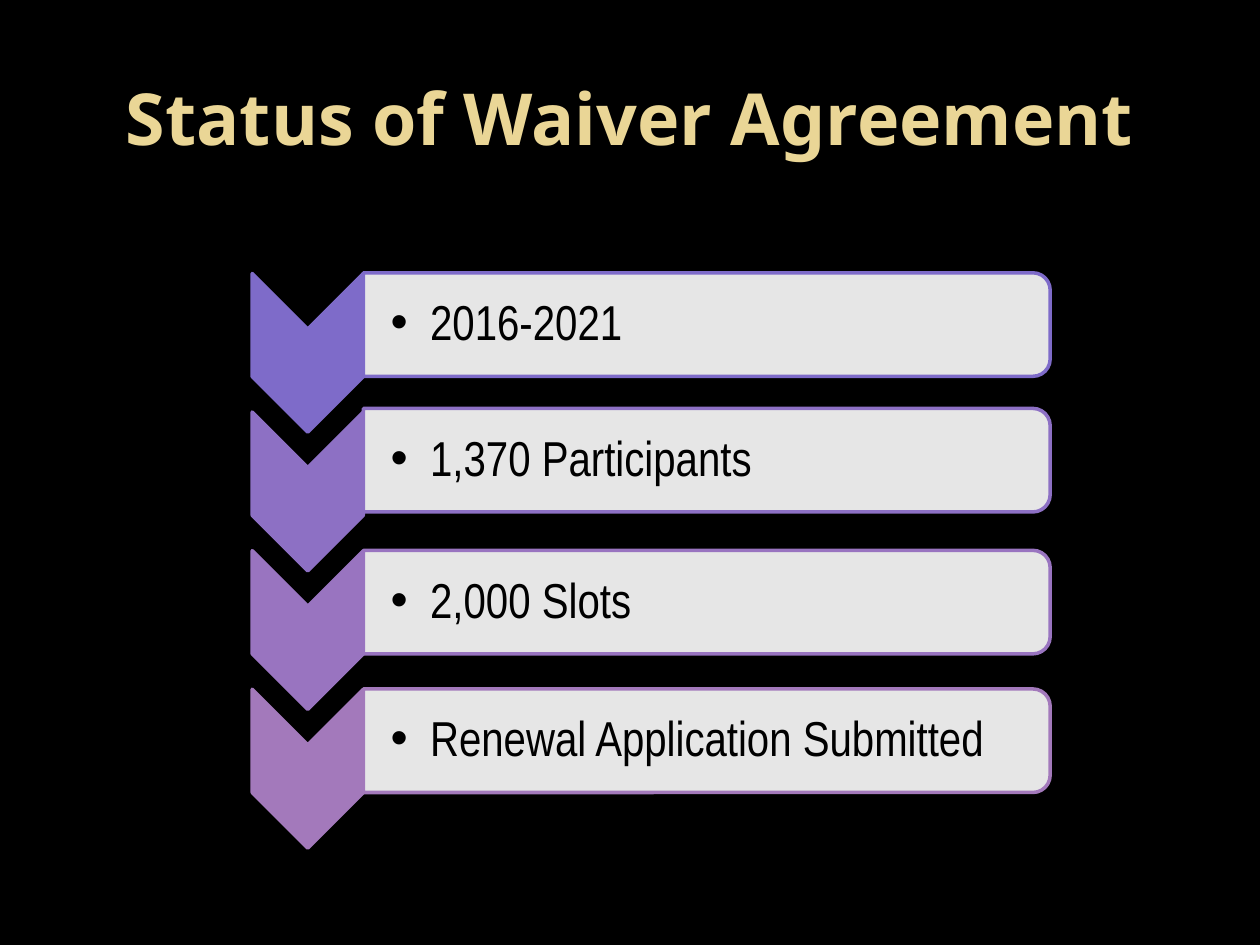
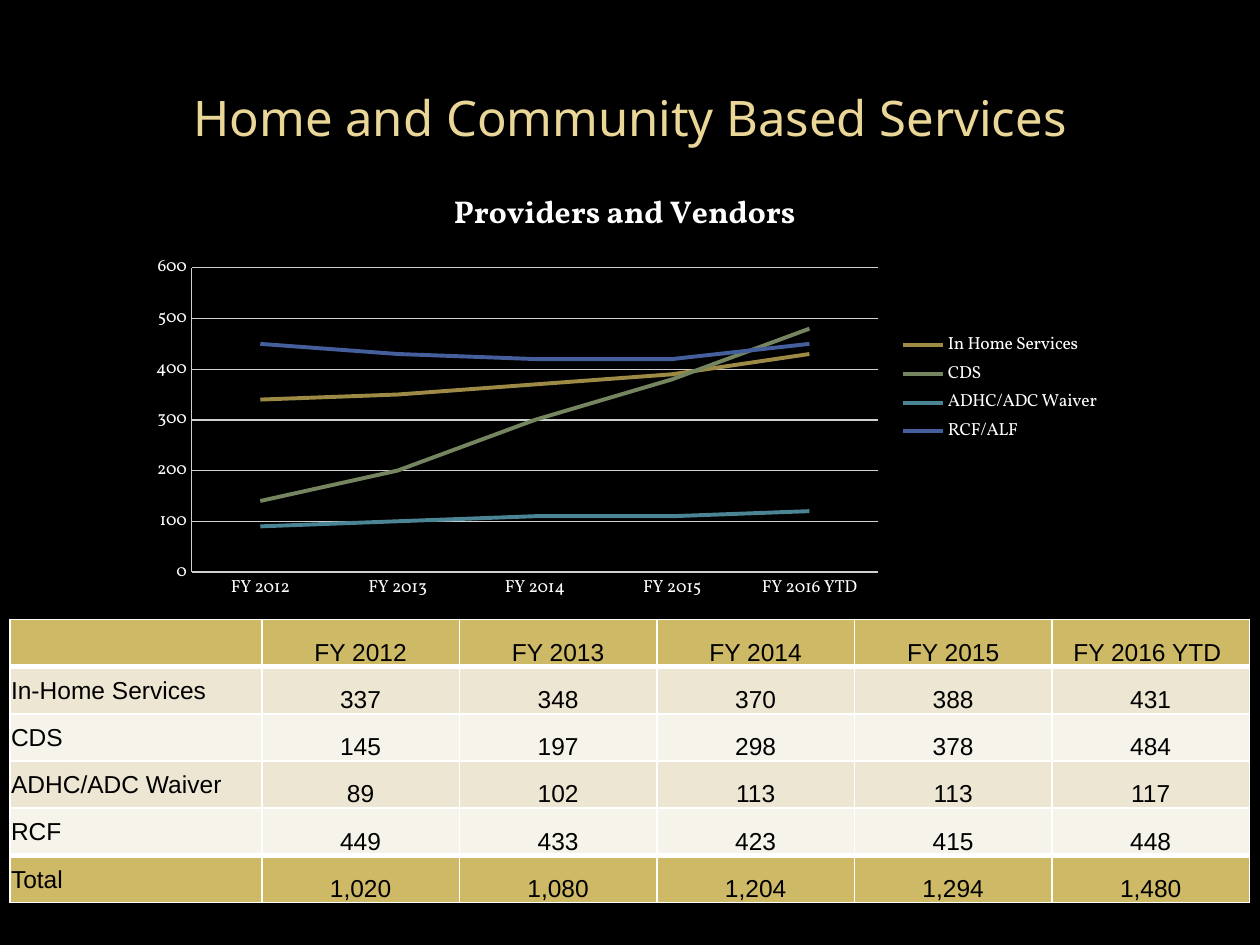
from lxml import etree
from pptx import Presentation
from pptx.chart.data import CategoryChartData
from pptx.dml.color import RGBColor
from pptx.enum.chart import XL_CHART_TYPE, XL_LEGEND_POSITION, XL_TICK_MARK
from pptx.enum.shapes import MSO_SHAPE
from pptx.enum.text import MSO_ANCHOR, PP_ALIGN
from pptx.oxml import parse_xml
from pptx.oxml.ns import nsdecls, qn
from pptx.util import Pt

COLORS = {
    "background": "000000", "title": "EAD696", "ink": "000000", "white": "FFFFFF",
    "header": "CEB966", "band_dark": "EDE6D3", "band_light": "F6F3EA", "grid": "D0D0D0",
}
STEP_COLORS = ["7E6BC9", "8D70C4", "9974C0", "A379BB"]
SERIES_COLORS = ["9C8A45", "75855F", "4A8495", "455E9C"]


def rgb(value):
    return RGBColor.from_string(value)


def add_titled_slide(deck, title, size, bold):
    slide = deck.slides.add_slide(deck.slide_layouts[6])
    slide.background.fill.solid()
    slide.background.fill.fore_color.rgb = rgb(COLORS["background"])
    frame = slide.shapes.add_textbox(Pt(36), Pt(21.6), Pt(648), Pt(90)).text_frame
    frame.word_wrap = True
    frame.vertical_anchor = MSO_ANCHOR.MIDDLE
    heading = frame.paragraphs[0]
    heading.text = title
    heading.alignment = PP_ALIGN.CENTER
    font = heading.runs[0].font
    font.name, font.size, font.bold = "Noto Sans", Pt(size), bold
    font.color.rgb = rgb(COLORS["title"])
    return slide


deck = Presentation()
deck.slide_width, deck.slide_height = Pt(720), Pt(540)

# Waiver status: a chevron and a rounded bar for each step
status = add_titled_slide(deck, "Status of Waiver Agreement", 41, True)
steps = ["2016-2021", "1,370 Participants", "2,000 Slots", "Renewal Application Submitted"]
bar_tops = [155.9, 233.4, 314.5, 393.7]
bar_length, bar_height = 392.4, 59.2

for index, (step, color, bar_top) in enumerate(zip(steps, STEP_COLORS, bar_tops)):
    chevron = status.shapes.add_shape(
        MSO_SHAPE.CHEVRON, Pt(130.5), Pt(169.9 + 79.2 * index), Pt(90.7), Pt(63.5))
    # A quarter turn swaps width and height around the centre
    turn_shift = (bar_length - bar_height) / 2
    bar = status.shapes.add_shape(
        MSO_SHAPE.ROUND_2_SAME_RECTANGLE, Pt(207.7 + turn_shift), Pt(bar_top - turn_shift),
        Pt(bar_height), Pt(bar_length))
    for part, fill in ((chevron, color), (bar, COLORS["white"])):
        part.rotation = 90
        part.shadow.inherit = False
        part.fill.solid()
        part.fill.fore_color.rgb = rgb(fill)
        part.line.color.rgb = rgb(color)
        part.line.width = Pt(2)
    bar_color = bar.fill._xPr.find(qn("a:solidFill"))[0]
    etree.SubElement(bar_color, qn("a:alpha"), val="90000")

    frame = status.shapes.add_textbox(
        Pt(207.5), Pt(bar_top + 3), Pt(389.5), Pt(53.3)).text_frame
    frame.word_wrap = True
    frame.vertical_anchor = MSO_ANCHOR.MIDDLE
    frame.margin_left = Pt(15.8)
    frame.margin_top = frame.margin_right = frame.margin_bottom = Pt(1.4)
    line = frame.paragraphs[0]
    line.text = step
    line.line_spacing = 0.9
    line.runs[0].font.name = "Arial Narrow"
    line.runs[0].font.size = Pt(28)
    line.runs[0].font.color.rgb = rgb(COLORS["ink"])
    bullet = line._p.get_or_add_pPr()
    bullet.set("marL", str(Pt(22.5)))
    bullet.set("indent", str(-Pt(22.5)))
    etree.SubElement(bullet, qn("a:buFont"), typeface="Arial")
    etree.SubElement(bullet, qn("a:buChar"), char="•")

# Services: provider counts by year
services = add_titled_slide(deck, "Home and Community Based Services", 28, False)
years = ["FY 2012", "FY 2013", "FY 2014", "FY 2015", "FY 2016 YTD"]
counts = {
    "In-Home Services": [337, 348, 370, 388, 431],
    "CDS": [145, 197, 298, 378, 484],
    "ADHC/ADC Waiver": [89, 102, 113, 113, 117],
    "RCF": [449, 433, 423, 415, 448],
}
totals = [sum(year) for year in zip(*counts.values())]
rows = [["", *years[:-1], "FY 2016 YTD "]]
rows += [[name, *(f"{n:,}" for n in values)]
         for name, values in [*counts.items(), ("Total", totals)]]
last = len(rows) - 1

# Table
table = services.shapes.add_table(
    len(rows), len(rows[0]), Pt(5.6), Pt(353.9), Pt(708.5), Pt(162)).table
table.first_row = table.horz_banding = False
for index, column in enumerate(table.columns):
    column.width = Pt(112.9 if index else 144)
for r, row in enumerate(rows):
    table.rows[r].height = Pt(27)
    if r in (0, last):
        fill = COLORS["header"]
    else:
        fill = COLORS["band_dark" if r % 2 else "band_light"]
    for c, entry in enumerate(row):
        cell = table.cell(r, c)
        cell.margin_left = cell.margin_right = cell.margin_top = Pt(0.7)
        cell.margin_bottom = 0
        cell.vertical_anchor = MSO_ANCHOR.BOTTOM if c else MSO_ANCHOR.MIDDLE
        cell.fill.solid()
        cell.fill.fore_color.rgb = rgb(fill)
        paragraph = cell.text_frame.paragraphs[0]
        paragraph.text = entry
        paragraph.alignment = PP_ALIGN.CENTER if c else PP_ALIGN.LEFT
        for run in paragraph.runs:
            run.font.name, run.font.size = "Arial", Pt(14)
            run.font.color.rgb = rgb(COLORS["ink"])
        # Heavy rules below the header and above the total
        edges = {"lnL": 1, "lnR": 1,
                 "lnT": 3 if r in (1, last) else 1,
                 "lnB": 3 if r in (0, last - 1) else 1}
        for position, (edge, weight) in enumerate(edges.items()):
            cell._tc.get_or_add_tcPr().insert(position, parse_xml(
                f'<a:{edge} {nsdecls("a")} w="{Pt(weight)}"><a:solidFill>'
                f'<a:srgbClr val="{COLORS["white"]}"/></a:solidFill></a:{edge}>'))

# Line chart, with counts rounded to tens
trend = CategoryChartData()
trend.categories = years
legend_names = ["In Home Services", "CDS", "ADHC/ADC Waiver", "RCF/ALF"]
for name, values in zip(legend_names, counts.values()):
    trend.add_series(name, [round(value, -1) for value in values])
chart = services.shapes.add_chart(
    XL_CHART_TYPE.LINE, Pt(78), Pt(96), Pt(558), Pt(252), trend).chart
chart.font.name, chart.font.size = "Vollkorn", Pt(10)
chart.font.color.rgb = rgb(COLORS["white"])
chart.has_title = True
chart.chart_title.text_frame.text = "Providers and Vendors"
title_font = chart.chart_title.text_frame.paragraphs[0].runs[0].font
title_font.name, title_font.size, title_font.bold = "Vollkorn", Pt(18), True
title_font.color.rgb = rgb(COLORS["white"])
chart.has_legend = True
chart.legend.position = XL_LEGEND_POSITION.RIGHT
chart.legend.include_in_layout = False

for axis in (chart.category_axis, chart.value_axis):
    axis.major_tick_mark = axis.minor_tick_mark = XL_TICK_MARK.NONE
    axis.format.line.color.rgb = rgb(COLORS["grid"])
    axis.format.line.width = Pt(0.75)
chart.value_axis.minimum_scale, chart.value_axis.maximum_scale = 0, 600
chart.value_axis.major_unit = 100
grid = chart.value_axis.major_gridlines.format.line
grid.color.rgb = rgb(COLORS["grid"])
grid.width = Pt(0.75)

for series, color in zip(chart.plots[0].series, SERIES_COLORS):
    series.smooth = False
    series.format.line.color.rgb = rgb(color)
    series.format.line.width = Pt(2.25)

# Fixed plot area, in hundredths of a percent of the chart
plot_area = chart._chartSpace.chart.plotArea
for old_layout in plot_area.findall(qn("c:layout")):
    plot_area.remove(old_layout)
shares = {"x": 565, "y": 2265, "w": 7030, "h": 6900}
plot_area.insert(0, parse_xml(
    f'<c:layout {nsdecls("c")}><c:manualLayout><c:layoutTarget val="inner"/>'
    '<c:xMode val="edge"/><c:yMode val="edge"/>'
    + "".join(f'<c:{key} val="{share / 10000}"/>' for key, share in shares.items())
    + "</c:manualLayout></c:layout>"))

deck.save("out.pptx")
